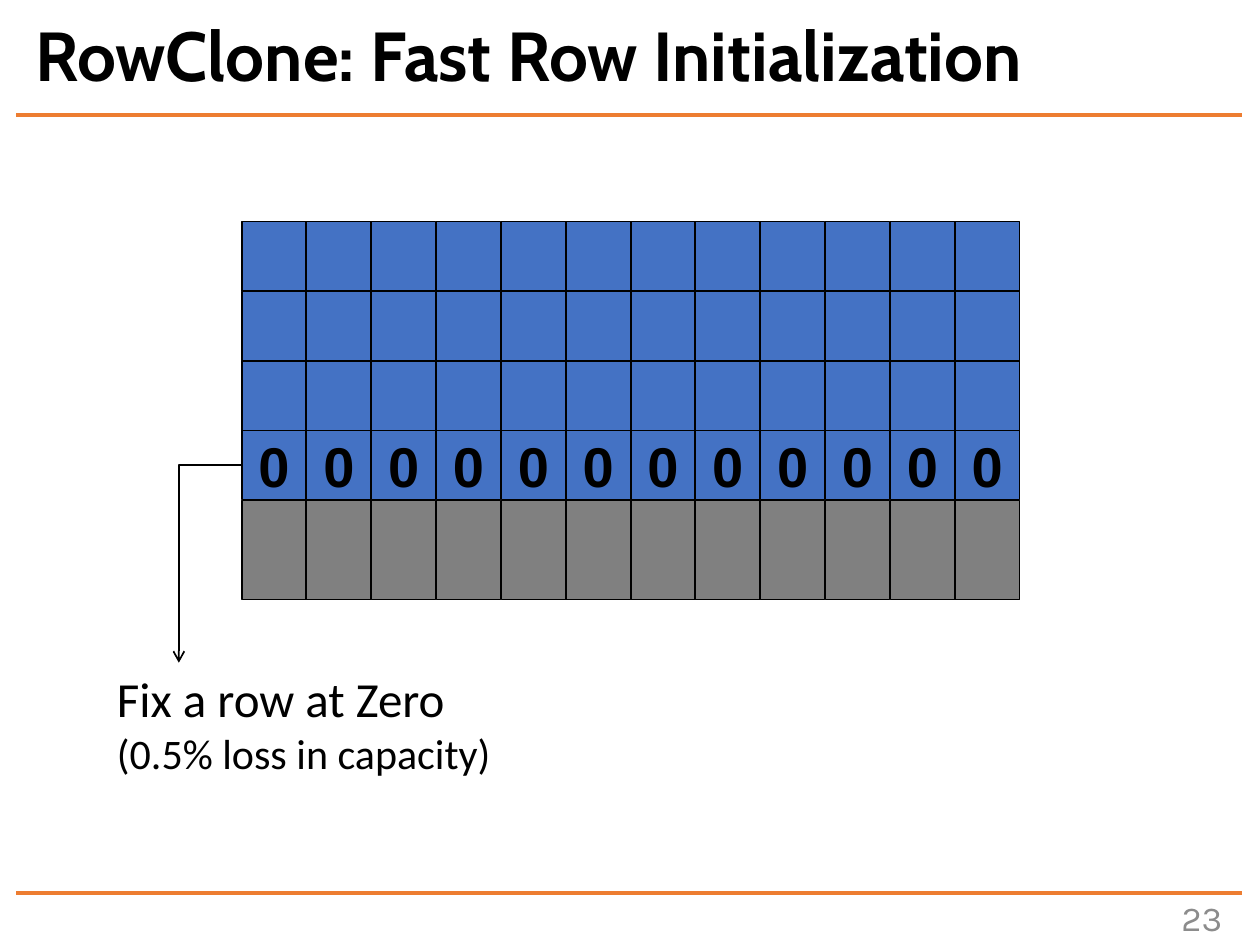
from lxml import etree
from pptx import Presentation
from pptx import util as u
from pptx.dml.color import RGBColor
from pptx.enum import shapes, text
from pptx.oxml import ns

BLACK = RGBColor(0x00, 0x00, 0x00)
ORANGE = RGBColor(0xED, 0x7D, 0x31)
BLUE = RGBColor(0x44, 0x72, 0xC4)
GRAY = RGBColor(0x80, 0x80, 0x80)
NUMBER_GRAY = RGBColor(0x8C, 0x8C, 0x8C)

COLUMNS = 12
ROW_VALUES = ["", "", "", "0"]
GRID_LEFT, LAST_COLUMN_LEFT = 1.92, 7.58
GRID_TOP, BUFFER_TOP = 1.76, 3.97
COLUMN_PITCH = (LAST_COLUMN_LEFT - GRID_LEFT) / (COLUMNS - 1)
ROW_PITCH = (BUFFER_TOP - GRID_TOP) / len(ROW_VALUES)
CELL_WIDTH, CELL_HEIGHT, BUFFER_HEIGHT = 0.51, 0.55, 0.79


class SlideBuilder:
    body_font = "Calibri"
    title_font = "Cabin"
    number_font = "Karla"
    cell_font = "Arial"

    def __init__(self, slide):
        self.slide = slide

    def run(self, paragraph, words, size, font, color=BLACK, bold=False):
        run = paragraph.add_run()
        run.text = words
        run.font.size = u.Pt(size)
        run.font.name = font
        run.font.bold = bold
        run.font.color.rgb = color

    def title(self, words, left, top, width, height):
        title = self.slide.shapes.title
        title.left, title.top = u.Inches(left), u.Inches(top)
        title.width, title.height = u.Inches(width), u.Inches(height)
        frame = title.text_frame
        frame.auto_size = text.MSO_AUTO_SIZE.NONE
        frame.vertical_anchor = text.MSO_ANCHOR.MIDDLE
        paragraph = frame.paragraphs[0]
        paragraph.alignment = text.PP_ALIGN.LEFT
        paragraph.line_spacing = 0.9
        self.run(paragraph, words, 39.6, self.title_font, bold=True)

    def label(self, lines, left, top, width, height, font, color=BLACK,
              align=text.PP_ALIGN.LEFT, anchor=text.MSO_ANCHOR.TOP, wrap=False):
        box = self.slide.shapes.add_textbox(
            u.Inches(left), u.Inches(top), u.Inches(width), u.Inches(height))
        frame = box.text_frame
        frame.word_wrap = wrap
        frame.vertical_anchor = anchor
        for index, (words, size) in enumerate(lines):
            paragraph = frame.add_paragraph() if index else frame.paragraphs[0]
            paragraph.alignment = align
            self.run(paragraph, words, size, font, color)

    def connector(self, kind, start, end, color, weight):
        line = self.slide.shapes.add_connector(
            kind, *(u.Inches(value) for value in (*start, *end)))
        line.line.color.rgb = color
        line.line.width = u.Pt(weight)
        etree.SubElement(line._element.spPr, ns.qn("a:effectLst"))
        return line

    def rule(self, y):
        self.connector(shapes.MSO_CONNECTOR.STRAIGHT, (0.13, y), (9.86, y), ORANGE, 2.25)

    def corner_arrow(self, start, end):
        arrow = self.connector(shapes.MSO_CONNECTOR.ELBOW, start, end, BLACK, 1)
        properties = arrow._element.spPr
        properties.find(ns.qn("a:prstGeom")).set("prst", "bentConnector2")
        outline = properties.find(ns.qn("a:ln"))
        etree.SubElement(outline, ns.qn("a:tailEnd"), type="arrow")

    def row(self, parent, top, height, fill, value=""):
        for column in range(COLUMNS):
            cell = parent.add_shape(
                shapes.MSO_SHAPE.RECTANGLE,
                u.Inches(GRID_LEFT + column * COLUMN_PITCH), u.Inches(top),
                u.Inches(CELL_WIDTH), u.Inches(height))
            cell.shadow.inherit = False
            cell.fill.solid()
            cell.fill.fore_color.rgb = fill
            cell.line.color.rgb = BLACK
            cell.line.width = u.Pt(0.75)
            if value:
                frame = cell.text_frame
                frame.vertical_anchor = text.MSO_ANCHOR.MIDDLE
                paragraph = frame.paragraphs[0]
                paragraph.alignment = text.PP_ALIGN.CENTER
                self.run(paragraph, value, 32, self.cell_font, bold=True)


def main():
    deck = Presentation()
    deck.slide_width, deck.slide_height = u.Inches(10), u.Inches(7.5)
    slide = deck.slides.add_slide(deck.slide_layouts[5])
    builder = SlideBuilder(slide)

    builder.title("RowClone: Fast Row Initialization", 0.18, 0.14, 9.73, 0.66)
    builder.label([("23", 20)], 8.72, 7.08, 1.08, 0.4, builder.number_font, NUMBER_GRAY,
                  text.PP_ALIGN.RIGHT, text.MSO_ANCHOR.MIDDLE, wrap=True)
    for y in (0.91, 7.09):
        builder.rule(y)

    for index, value in enumerate(ROW_VALUES):
        builder.row(slide.shapes, GRID_TOP + index * ROW_PITCH, CELL_HEIGHT, BLUE, value)
    row_buffer = slide.shapes.add_group_shape()
    builder.row(row_buffer.shapes, BUFFER_TOP, BUFFER_HEIGHT, GRAY)

    builder.label([("Fix a row at Zero", 28), ("(0.5% loss in capacity)", 24)],
                  0.83, 5.26, 3.19, 0.98, builder.body_font)
    builder.corner_arrow((GRID_LEFT, 3.69), (1.42, 5.26))

    deck.save("out.pptx")


if __name__ == "__main__":
    main()
